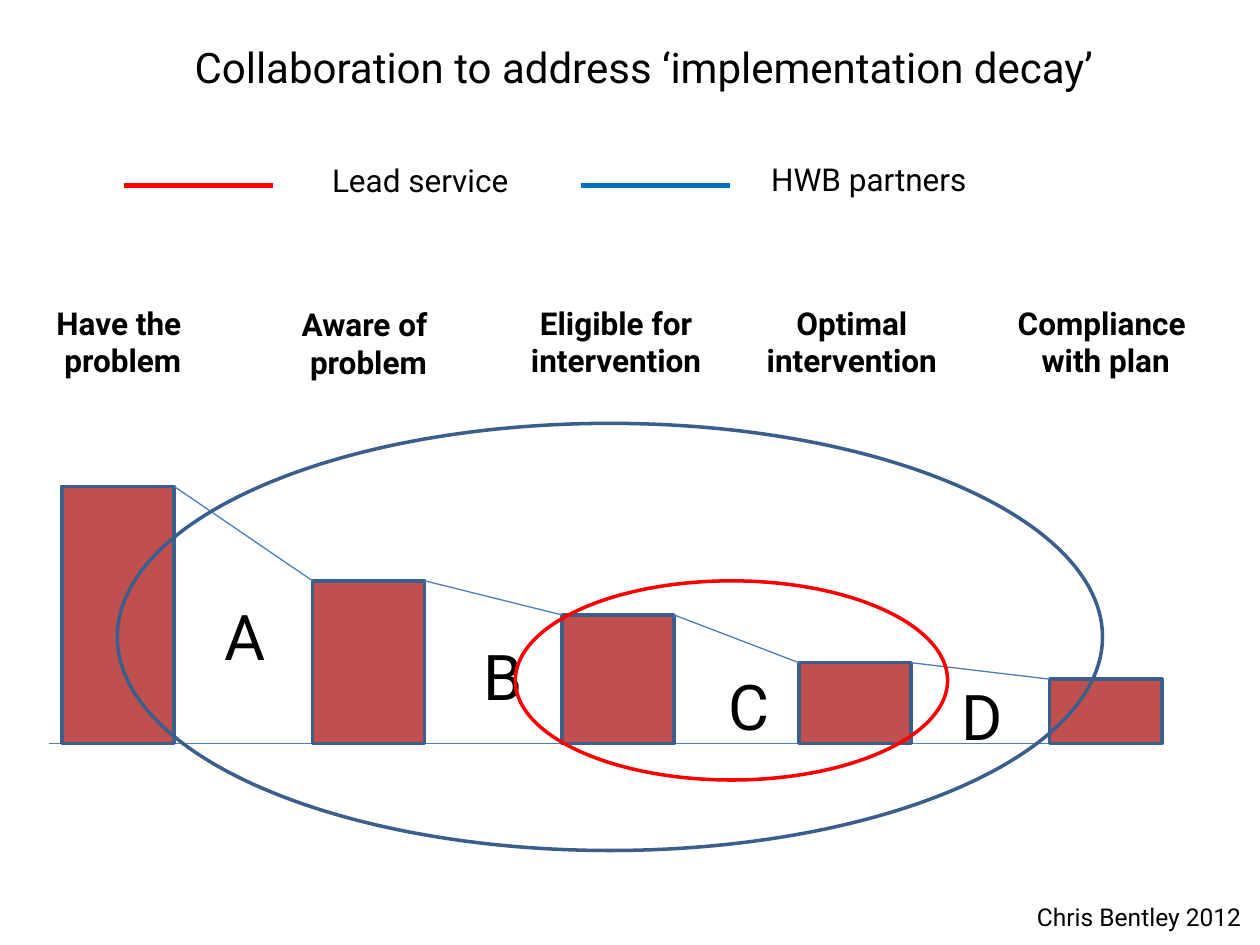
"""Build the implementation decay slide."""
from lxml import etree
from pptx import Presentation
from pptx import util as u
from pptx.dml.color import RGBColor
from pptx.enum import shapes, text
from pptx.oxml.ns import qn

BLACK = RGBColor(0x00, 0x00, 0x00)
RED = RGBColor(0xFF, 0x00, 0x00)
BLUE = RGBColor(0x00, 0x70, 0xC0)
NAVY = RGBColor(0x3A, 0x5F, 0x8C)
LINK = RGBColor(0x4B, 0x7E, 0xBC)
BRICK = RGBColor(0xC0, 0x50, 0x4D)

BASE, BAR_W = 424.8, 64.1
BARS = [(35.3, 277.9), (178.6, 331.9), (321.1, 351.4), (456.5, 378.7), (599.8, 388.1)]
HEADINGS = [
    (19.4, 169.9, 101.5, ["Have the ", "problem"]),
    (159.8, 170.6, 101.5, ["Aware of ", "problem"]),
    (288.7, 169.9, 126.7, ["Eligible for", "intervention"]),
    (423.4, 169.9, 126.7, ["Optimal", "intervention"]),
    (569.5, 169.9, 120.2, ["Compliance", " with plan"]),
]
LETTERS = [
    ("A", 121.7, 337.7, 36.7, False),
    ("B", 269.3, 360.7, 25.2, True),
    ("C", 409, 378, 26.6, True),
    ("D", 541.4, 383.8, 39.6, False),
]
LEGEND = [
    (70.6, 161.3, 88.6, "Lead service", RED),
    (331.9, 417.6, 87.8, "HWB partners", BLUE),
]


def write(sp, lines, size, bold=False, wrap=False):
    """Fill a shape with centred lines of text."""
    tf = sp.text_frame
    frame = {"word_wrap": wrap, "auto_size": text.MSO_AUTO_SIZE.NONE,
             "vertical_anchor": text.MSO_ANCHOR.TOP}
    for name, value in frame.items():
        setattr(tf, name, value)
    for i, line in enumerate(lines):
        p = tf.paragraphs[0] if i == 0 else tf.add_paragraph()
        p.alignment = text.PP_ALIGN.CENTER
        r = p.add_run()
        r.text = line
        for name, value in {"name": "Roboto", "size": u.Pt(size), "bold": bold}.items():
            setattr(r.font, name, value)
        r.font.color.rgb = BLACK


def add_title(slide, title, size, **box):
    """Place and format the title placeholder."""
    sp = slide.shapes.title
    for name, value in box.items():
        setattr(sp, name, u.Pt(value))
    write(sp, [title], size)


def add_label(slide, x, y, w, h, lines, size, **style):
    """Add a text box."""
    write(slide.shapes.add_textbox(*map(u.Pt, (x, y, w, h))), lines, size, **style)


def add_line(slide, x1, y1, x2, y2, color, width):
    """Add a straight line without a shadow."""
    sp = slide.shapes.add_connector(shapes.MSO_CONNECTOR.STRAIGHT, *map(u.Pt, (x1, y1, x2, y2)))
    sp.line.color.rgb = color
    sp.line.width = u.Pt(width)
    etree.SubElement(sp._element.spPr, qn("a:effectLst"))


def add_outline(slide, kind, x, y, w, h, color, fill=None):
    """Add an outlined shape, filled when a fill colour is given."""
    sp = slide.shapes.add_shape(kind, *map(u.Pt, (x, y, w, h)))
    sp.shadow.inherit = False
    sp.line.color.rgb = color
    sp.line.width = u.Pt(2)
    if fill is None:
        sp.fill.background()
    else:
        sp.fill.solid()
        sp.fill.fore_color.rgb = fill


def main():
    """Draw the slide and save it."""
    prs = Presentation()
    prs.slide_width, prs.slide_height = u.Pt(720), u.Pt(540)
    slide = prs.slides.add_slide(prs.slide_layouts[5])
    add_title(slide, "Collaboration to address ‘implementation decay’", 24,
              left=95.8, top=20.2, width=544.3, height=36)

    add_line(slide, 28.1, BASE, 656.6, BASE, LINK, 0.75)
    for x, top in BARS:
        add_outline(slide, shapes.MSO_SHAPE.RECTANGLE, x, top, BAR_W, BASE - top, NAVY, BRICK)
    for (x1, y1), (x2, y2) in zip(BARS, BARS[1:]):
        add_line(slide, x1 + BAR_W, y1, x2, y2, LINK, 0.75)

    for x, y, w, lines in HEADINGS:
        add_label(slide, x, y, w, 51.1, lines, 18, bold=True)
    for letter, x, y, w, wrap in LETTERS:
        add_label(slide, x, y, w, 51.1, [letter], 36, wrap=wrap)

    add_outline(slide, shapes.MSO_SHAPE.OVAL, 294.5, 331.9, 247, 113.8, RED)
    add_outline(slide, shapes.MSO_SHAPE.OVAL, 67, 241.9, 563, 244.1, NAVY)
    add_label(slide, 585.4, 511.9, 131, 24.5, ["Chris Bentley 2012"], 14)

    for x, label_x, label_y, label, color in LEGEND:
        add_line(slide, x, 105.8, x + 85.3, 105.8, color, 3)
        add_label(slide, label_x, label_y, 157.7, 28.8, [label], 18, wrap=True)
    prs.save("out.pptx")


if __name__ == "__main__":
    main()
